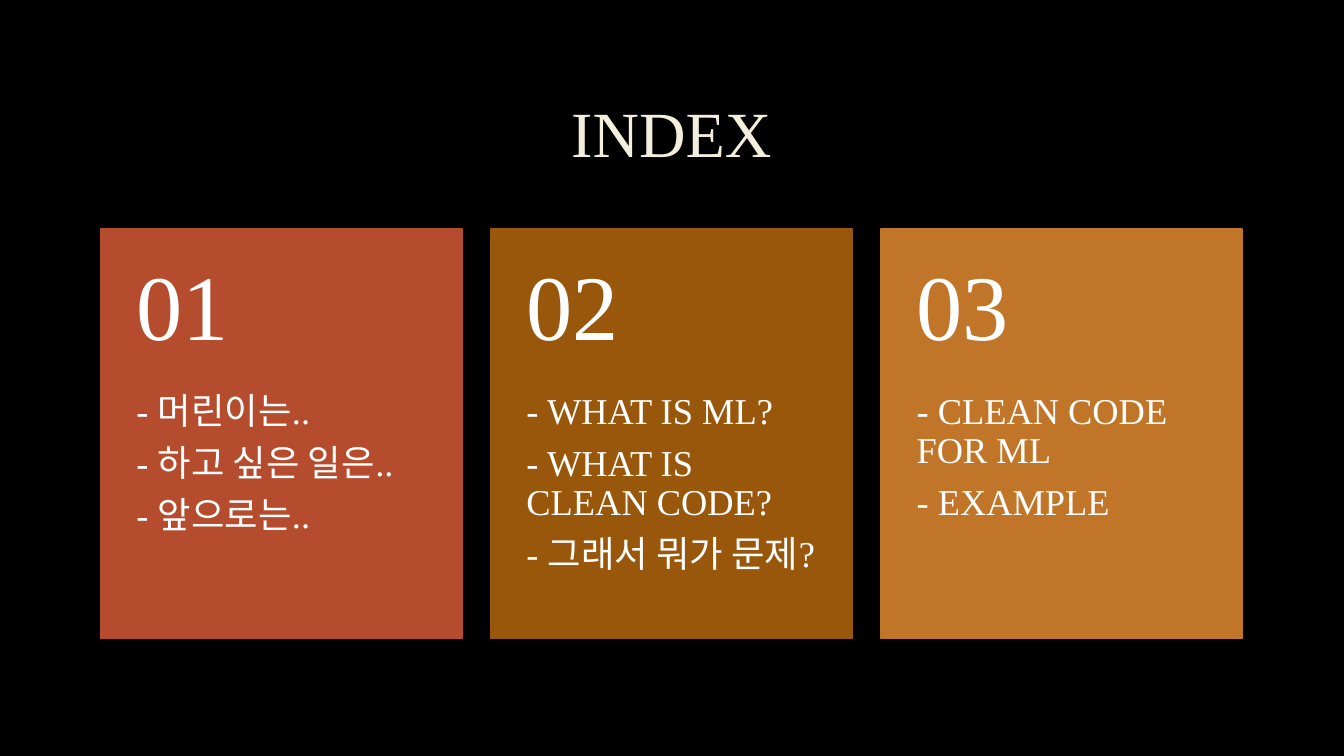
import pptx
import pptx.util
import pptx.dml.color
import pptx.enum.shapes
import pptx.enum.text

Pt = pptx.util.Pt
RGBColor = pptx.dml.color.RGBColor
ANCHOR = pptx.enum.text.MSO_ANCHOR
ALIGN = pptx.enum.text.PP_ALIGN

BLACK = RGBColor(0x00, 0x00, 0x00)
CREAM = RGBColor(0xF4, 0xEE, 0xDC)
WHITE = RGBColor(0xFF, 0xFF, 0xFF)
RED = RGBColor(0xB5, 0x4C, 0x2D)
BROWN = RGBColor(0x99, 0x57, 0x0C)
ORANGE = RGBColor(0xC1, 0x75, 0x29)

FONT = "Times New Roman"
NUMBER_HEIGHT = 117
CARD_GAP = 20.6
CARDS = [
    ("01", RED, ["- 머린이는..", "- 하고 싶은 일은..", "- 앞으로는.."]),
    ("02", BROWN, ["- WHAT IS ML?", "- WHAT IS CLEAN CODE?", "- 그래서 뭐가 문제?"]),
    ("03", ORANGE, ["- CLEAN CODE FOR ML", "- EXAMPLE"]),
]


def write_lines(tf, lines, size, color, align=ALIGN.LEFT, after=0):
    tf.word_wrap = True
    tf.auto_size = pptx.enum.text.MSO_AUTO_SIZE.NONE
    for i, line in enumerate(lines):
        p = tf.add_paragraph() if i else tf.paragraphs[0]
        p.alignment = align
        p.line_spacing = 0.9
        p.space_after = Pt(after)
        r = p.add_run()
        r.text = line
        r.font.name = FONT
        r.font.size = Pt(size)
        r.font.color.rgb = color


def add_title(s, left, top, width, height):
    sp = s.shapes.title
    sp.left, sp.top, sp.width, sp.height = Pt(left), Pt(top), Pt(width), Pt(height)
    sp.text_frame.vertical_anchor = ANCHOR.MIDDLE
    write_lines(sp.text_frame, ["INDEX"], 46, CREAM, ALIGN.CENTER)


def add_card_text(s, left, top, width, height, lines, size, anchor, inset_top, inset_bottom):
    sp = s.shapes.add_textbox(Pt(left), Pt(top), Pt(width), Pt(height))
    tf = sp.text_frame
    tf.vertical_anchor = anchor
    tf.margin_left = tf.margin_right = Pt(25.5)
    tf.margin_top, tf.margin_bottom = Pt(inset_top), Pt(inset_bottom)
    write_lines(tf, lines, size, WHITE, after=round(size * 0.35, 1))


def add_card(s, left, top, width, height, number, color, topics):
    sp = s.shapes.add_shape(
        pptx.enum.shapes.MSO_SHAPE.RECTANGLE, Pt(left), Pt(top), Pt(width), Pt(height))
    sp.shadow.inherit = False
    sp.fill.solid()
    sp.fill.fore_color.rgb = color
    sp.line.color.rgb = color
    sp.line.width = Pt(1.25)
    add_card_text(s, left, top + NUMBER_HEIGHT, width, height - NUMBER_HEIGHT,
                  topics, 26, ANCHOR.TOP, 0, 26)
    add_card_text(s, left, top, width, NUMBER_HEIGHT,
                  [number], 66, ANCHOR.MIDDLE, 13, 13)


def add_cards(s, left, top, width, height):
    card_width = (width - CARD_GAP * (len(CARDS) - 1)) / len(CARDS)
    for i, (number, color, topics) in enumerate(CARDS):
        add_card(s, left + i * (card_width + CARD_GAP), top, card_width, height,
                 number, color, topics)


def add_index_slide(prs):
    s = prs.slides.add_slide(prs.slide_layouts[5])
    s.background.fill.solid()
    s.background.fill.fore_color.rgb = BLACK
    add_title(s, 72, 48, 815, 99.5)
    add_cards(s, 72, 163.5, 815.2, 292.5)


def main():
    prs = pptx.Presentation()
    prs.slide_width, prs.slide_height = Pt(960), Pt(540)
    add_index_slide(prs)
    prs.save("out.pptx")


if __name__ == "__main__":
    main()
